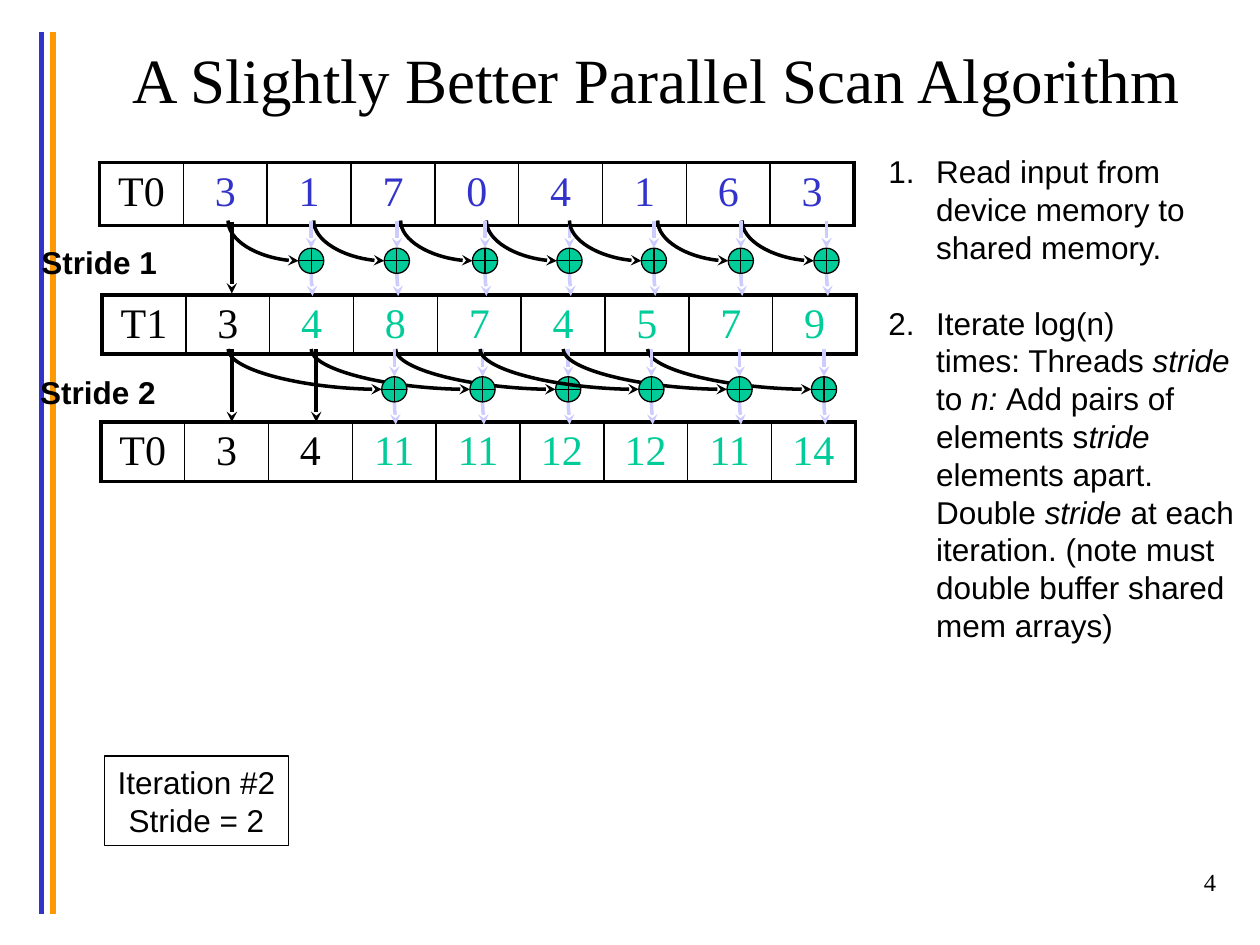
from lxml import etree
from pptx import Presentation
from pptx import util as u
from pptx.dml.color import RGBColor
from pptx.enum import shapes, text
from pptx.oxml.ns import qn

Inches, Pt = u.Inches, u.Pt
COLORS = {"ink": "000000", "input": "3333CC", "sum": "00CC99",
          "feed": "CCCCFF", "bar": "FF9900"}
SANS, SERIF = "Arial", "Times New Roman"


def add_run(paragraph, words, size, font, color="ink", bold=False, italic=False):
    run = paragraph.add_run()
    run.text = words
    run.font.size = Pt(size)
    run.font.name = font
    run.font.bold = bold
    run.font.italic = italic
    run.font.color.rgb = RGBColor.from_string(COLORS[color])


def add_line(x1, y1, x2, y2, color="ink", width=2, arrow=True, bend=None):
    kind = shapes.MSO_CONNECTOR.CURVE if bend else shapes.MSO_CONNECTOR.STRAIGHT
    line = slide.shapes.add_connector(kind, Inches(x1), Inches(y1), Inches(x2), Inches(y2))
    line.line.color.rgb = RGBColor.from_string(COLORS[color])
    line.line.width = Pt(width)
    properties = line._element.spPr
    if arrow:
        etree.SubElement(properties.find(qn("a:ln")), qn("a:tailEnd"), type="stealth")
    etree.SubElement(properties, qn("a:effectLst"))
    if bend:
        across, down = x2 - x1, y2 - y1
        line.left = Inches((x1 + x2 - down) / 2)
        line.top = Inches((y1 + y2 - across) / 2)
        line.width, line.height = Inches(down), Inches(across)
        frame = properties.find(qn("a:xfrm"))
        frame.set("rot", "16200000")
        frame.set("flipH", "1")
        properties.find(qn("a:prstGeom")).set("prst", bend)


prs = Presentation()
prs.slide_width, prs.slide_height = Inches(10), Inches(7.5)
slide = prs.slides.add_slide(prs.slide_layouts[1])

add_line(0.33, 0.25, 0.33, 7.25, "input", 3, arrow=False)
add_line(0.42, 0.25, 0.42, 7.25, "bar", 3, arrow=False)

title = slide.shapes.title
title.left, title.top, title.width, title.height = map(Inches, (0.67, 0, 9.08, 1.25))
title.text_frame.auto_size = text.MSO_AUTO_SIZE.NONE
title.text_frame.vertical_anchor = text.MSO_ANCHOR.MIDDLE
heading = title.text_frame.paragraphs[0]
heading.alignment = text.PP_ALIGN.CENTER
add_run(heading, "A Slightly Better Parallel Scan Algorithm", 36, SERIF)

arrays = [
    (0.79, 1.29, 0.5, "T0", [3, 1, 7, 0, 4, 1, 6, 3], 0, "input"),
    (0.81, 2.34, 0.47, "T1", [3, 4, 8, 7, 4, 5, 7, 9], 1, "sum"),
    (0.8, 3.35, 0.47, "T0", [3, 4, 11, 11, 12, 12, 11, 14], 2, "sum"),
]
for left, top, height, label, values, kept, value_color in arrays:
    entries = [label] + values
    array = slide.shapes.add_table(1, len(entries), Inches(left), Inches(top),
                                   Inches(5.99), Inches(height)).table
    array.first_row = array.horz_banding = False
    for column, entry in enumerate(entries):
        cell = array.cell(0, column)
        cell.margin_top, cell.margin_bottom = Inches(0.05), Inches(0.03)
        cell.margin_left = cell.margin_right = Inches(0.05)
        edges = {"lnL": 2.25 if column == 0 else 1,
                 "lnR": 2.25 if column == len(values) else 1,
                 "lnT": 2.25, "lnB": 2.25}
        for edge, weight in edges.items():
            border = etree.SubElement(cell._tc.get_or_add_tcPr(), qn("a:" + edge),
                                      w=str(Pt(weight)))
            paint = etree.SubElement(border, qn("a:solidFill"))
            etree.SubElement(paint, qn("a:srgbClr"), val=COLORS["ink"])
        cell.fill.background()
        paragraph = cell.text_frame.paragraphs[0]
        paragraph.alignment = text.PP_ALIGN.CENTER
        add_run(paragraph, str(entry), 24, SERIF, "ink" if column <= kept else value_color)

add_line(1.84, 1.76, 1.84, 2.33)
for x in (1.84, 2.51):
    add_line(x, 2.77, x, 3.35)

strides = [
    (1.75, [(3.86, 4.52), (3.18, 3.85), (2.49, 3.15), (1.81, 2.47),
            (5.89, 6.56), (5.22, 5.88), (4.52, 5.19)]),
    (2.77, [(3.14, 4.51), (2.47, 3.83), (1.81, 3.13),
            (5.14, 6.54), (4.47, 5.87), (3.81, 5.17)]),
]
for top, additions in strides:
    for source, target in additions:
        add_line(source, top, target - 0.1, top + 0.32, bend="curvedConnector2")
        add_line(target, top, target, top + 0.22, "feed")
        add_line(target, top + 0.42, target + 0.01, top + 0.6, "feed", bend="curvedConnector3")
        adder = slide.shapes.add_shape(shapes.MSO_SHAPE.FLOWCHART_OR, Inches(target - 0.1),
                                       Inches(top + 0.22), Inches(0.2), Inches(0.2))
        adder.shadow.inherit = False
        adder.fill.solid()
        adder.fill.fore_color.rgb = RGBColor.from_string(COLORS["sum"])
        adder.line.color.rgb = RGBColor.from_string(COLORS["ink"])
        adder.line.width = Pt(0.75)

for left, top, caption in ((0.23, 1.88, "Stride 1"), (0.22, 2.91, "Stride 2")):
    stride_label = slide.shapes.add_textbox(Inches(left), Inches(top), Inches(1.12), Inches(0.4))
    stride_label.text_frame.word_wrap = False
    add_run(stride_label.text_frame.paragraphs[0], caption, 18, SANS, bold=True)

steps = slide.placeholders[1]
steps.left, steps.top, steps.width, steps.height = map(Inches, (6.95, 1.16, 3.07, 4.34))
steps.text_frame.auto_size = text.MSO_AUTO_SIZE.NONE
step_runs = [
    [("Read input from", False), None, ("device memory to", False), None,
     ("shared memory.", False)],
    [("Iterate log(n)", False), None, ("times: Threads ", False), ("stride ", True),
     ("to ", False), ("n: ", True), ("Add pairs of elements s", False), ("tride", True),
     (" elements apart. Double ", False), ("stride", True),
     (" at each iteration. (note must double buffer shared mem arrays)", False)],
]
for number, runs in enumerate(step_runs):
    step = steps.text_frame.add_paragraph() if number else steps.text_frame.paragraphs[0]
    step.line_spacing = Pt(21.6)
    step.space_before = Pt(21.6 * number)
    step.space_after = Pt(0)
    layout = step._p.get_or_add_pPr()
    layout.set("marL", str(Inches(0.38)))
    layout.set("indent", str(Inches(-0.38)))
    etree.SubElement(layout, qn("a:buFont"), typeface=SANS)
    etree.SubElement(layout, qn("a:buAutoNum"), type="arabicPeriod")
    for piece in runs:
        if piece is None:
            step.add_line_break()
        else:
            add_run(step, piece[0], 18, SANS, italic=piece[1])

iteration = slide.shapes.add_shape(shapes.MSO_SHAPE.RECTANGLE, Inches(0.83), Inches(6),
                                   Inches(1.46), Inches(0.71))
iteration.shadow.inherit = False
iteration.fill.background()
iteration.line.color.rgb = RGBColor.from_string(COLORS["ink"])
iteration.line.width = Pt(0.75)
iteration.text_frame.word_wrap = False
status = iteration.text_frame.paragraphs[0]
status.alignment = text.PP_ALIGN.CENTER
status.line_spacing = Pt(21.6)
add_run(status, "Iteration #2", 18, SANS)
status.add_line_break()
add_run(status, "Stride = 2", 18, SANS)

page_number = slide.shapes.add_textbox(Inches(7.67), Inches(6.83), Inches(2.08), Inches(0.5))
page_number.text_frame.word_wrap = True
page = page_number.text_frame.paragraphs[0]
page.alignment = text.PP_ALIGN.RIGHT
add_run(page, "4", 14, SERIF)

prs.save("out.pptx")
